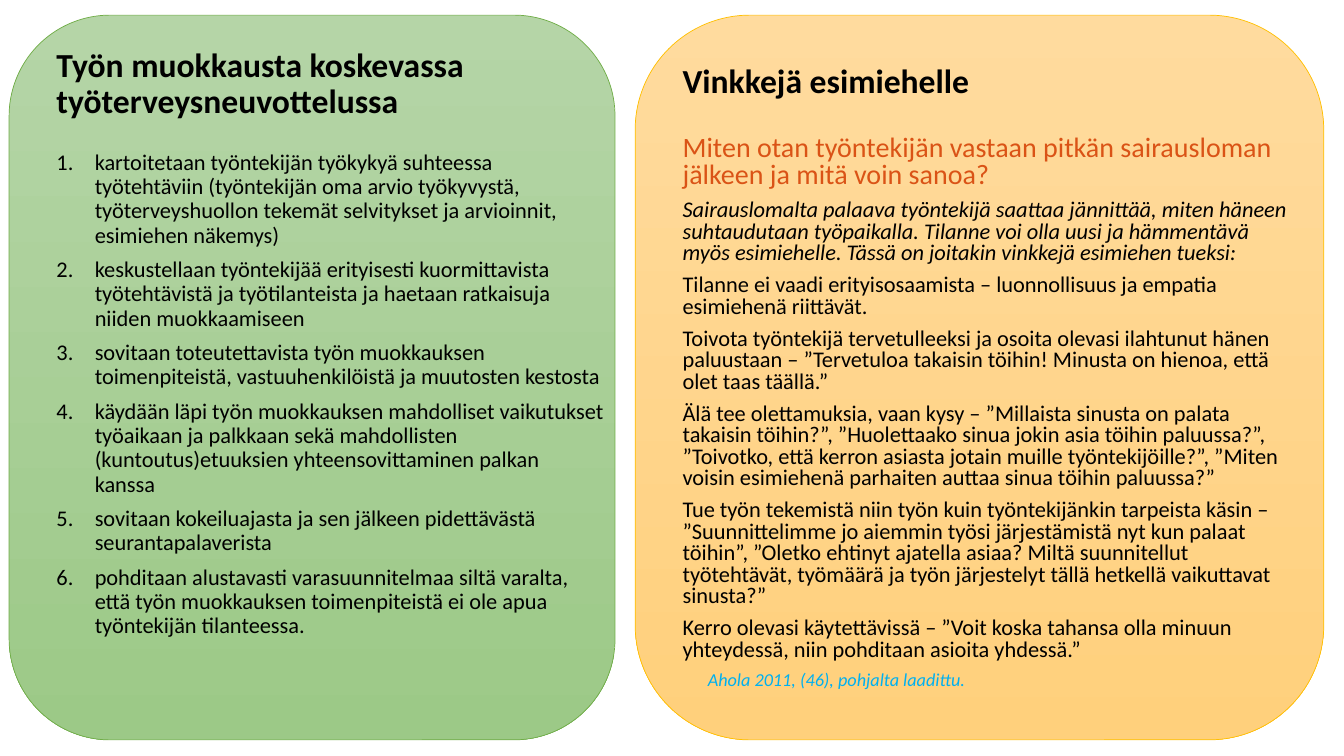
from lxml import etree
from pptx import Presentation
from pptx.dml.color import RGBColor
from pptx.enum.shapes import MSO_SHAPE
from pptx.enum.text import MSO_ANCHOR, MSO_AUTO_SIZE, PP_ALIGN
from pptx.oxml.ns import qn
from pptx.util import Inches, Pt

ROUNDED = MSO_SHAPE.ROUNDED_RECTANGLE
TOP, BOTTOM = MSO_ANCHOR.TOP, MSO_ANCHOR.BOTTOM
NO_AUTOFIT = MSO_AUTO_SIZE.NONE
LEFT = PP_ALIGN.LEFT
COMPARISON_LAYOUT = 4

WORK_STEPS = [
    "kartoitetaan työntekijän työkykyä suhteessa työtehtäviin (työntekijän oma arvio "
    "työkyvystä, työterveyshuollon tekemät selvitykset ja arvioinnit, esimiehen näkemys)",
    "keskustellaan työntekijää erityisesti kuormittavista työtehtävistä ja työtilanteista "
    "ja haetaan ratkaisuja niiden muokkaamiseen",
    "sovitaan toteutettavista työn muokkauksen toimenpiteistä, vastuuhenkilöistä ja "
    "muutosten kestosta",
    "käydään läpi työn muokkauksen mahdolliset vaikutukset työaikaan ja palkkaan sekä "
    "mahdollisten (kuntoutus)etuuksien yhteensovittaminen palkan kanssa",
    "sovitaan kokeiluajasta ja sen jälkeen pidettävästä seurantapalaverista",
    "pohditaan alustavasti varasuunnitelmaa siltä varalta, että työn muokkauksen "
    "toimenpiteistä ei ole apua työntekijän tilanteessa.",
]
QUESTION = "Miten otan työntekijän vastaan pitkän sairausloman jälkeen ja mitä voin sanoa?"
INTRODUCTION = (
    "Sairauslomalta palaava työntekijä saattaa jännittää, miten häneen suhtaudutaan "
    "työpaikalla. Tilanne voi olla uusi ja hämmentävä myös esimiehelle. Tässä on joitakin "
    "vinkkejä esimiehen tueksi:"
)
TIPS = [
    "Tilanne ei vaadi erityisosaamista – luonnollisuus ja empatia esimiehenä riittävät.",
    "Toivota työntekijä tervetulleeksi ja osoita olevasi ilahtunut hänen paluustaan – "
    "”Tervetuloa takaisin töihin! Minusta on hienoa, että olet taas täällä.”",
    "Älä tee olettamuksia, vaan kysy – ”Millaista sinusta on palata takaisin töihin?”, "
    "”Huolettaako sinua jokin asia töihin paluussa?”, ”Toivotko, että kerron asiasta jotain "
    "muille työntekijöille?”, ”Miten voisin esimiehenä parhaiten auttaa sinua töihin paluussa?”",
    "Tue työn tekemistä niin työn kuin työntekijänkin tarpeista käsin – ”Suunnittelimme jo "
    "aiemmin työsi järjestämistä nyt kun palaat töihin”, ”Oletko ehtinyt ajatella asiaa? "
    "Miltä suunnitellut työtehtävät, työmäärä ja työn järjestelyt tällä hetkellä vaikuttavat "
    "sinusta?”",
    "Kerro olevasi käytettävissä – ”Voit koska tahansa olla minuun yhteydessä, niin "
    "pohditaan asioita yhdessä.”",
]
SOURCE = "Ahola 2011, (46), pohjalta laadittu."


def color(value):
    return RGBColor.from_string(value)


class ComparisonSlide:
    font_name = "Calibri"
    text_color = "000000"
    body_size = 16
    paragraph_gap = Pt(7.5)

    def __init__(self, deck):
        self.page = deck.slides.add_slide(deck.slide_layouts[COMPARISON_LAYOUT])
        title = self.page.shapes.title.element
        title.getparent().remove(title)

    def panel(self, left, width, top_color, bottom_color, line_color):
        """Add a rounded gradient panel behind the text placeholders."""
        shape = self.page.shapes.add_shape(
            ROUNDED, Inches(left), Inches(0.15), Inches(width), Inches(7.19))
        shape.shadow.inherit = False
        shape.fill.gradient()
        shape.fill.gradient_angle = 270
        for stop, value in zip(shape.fill.gradient_stops, (top_color, bottom_color)):
            stop.color.rgb = color(value)
        shape.line.color.rgb = color(line_color)
        shape.line.width = Pt(0.5)
        first_placeholder = self.page.placeholders[1].element
        first_placeholder.addprevious(shape.element)

    def placeholder(self, index, left, top, width, height, anchor=TOP):
        """Place a layout placeholder and return its text frame."""
        box = self.page.placeholders[index]
        box.left, box.top = Inches(left), Inches(top)
        box.width, box.height = Inches(width), Inches(height)
        frame = box.text_frame
        frame.word_wrap = True
        frame.auto_size = NO_AUTOFIT
        frame.vertical_anchor = anchor
        return frame

    def paragraph(self, frame, text, size=body_size, text_color=text_color, bold=False,
                  italic=False, spacing=0.9, margin=0, numbered=False):
        first = not frame.text
        para = frame.paragraphs[0] if first else frame.add_paragraph()
        properties = para._p.get_or_add_pPr()
        properties.set("marL", str(Inches(margin)))
        properties.set("indent", str(-Inches(margin) if numbered else 0))
        if numbered:
            etree.SubElement(properties, qn("a:buFont"), typeface=self.font_name)
            etree.SubElement(properties, qn("a:buAutoNum"), type="arabicPeriod")
        else:
            etree.SubElement(properties, qn("a:buNone"))
        para.alignment = LEFT
        para.line_spacing = spacing
        para.space_before = Pt(0) if first else self.paragraph_gap
        span = para.add_run()
        span.text = text
        span.font.name = self.font_name
        span.font.size = Pt(size)
        span.font.bold = bold
        span.font.italic = italic
        span.font.color.rgb = color(text_color)

    def heading(self, index, left, top, width, text):
        frame = self.placeholder(index, left, top, width, 0.9, BOTTOM)
        self.paragraph(frame, text, size=24, bold=True)


def main():
    deck = Presentation()
    deck.slide_width, deck.slide_height = Inches(13.33), Inches(7.5)
    slide = ComparisonSlide(deck)

    slide.panel(6.3, 6.83, "FFDB9E", "FFD07C", "FFC000")
    slide.panel(0.09, 6.01, "B5D5A7", "9CC987", "70AD47")

    slide.heading(1, 0.46, 0.35, 5.64, "Työn muokkausta koskevassa työterveysneuvottelussa")
    steps = slide.placeholder(2, 0.46, 1.45, 5.64, 5.35)
    for step in WORK_STEPS:
        slide.paragraph(steps, step, margin=0.38, numbered=True)

    slide.heading(3, 6.67, 0.15, 5.67, "Vinkkejä esimiehelle")
    advice = slide.placeholder(4, 6.67, 1.3, 6.28, 6.05)
    slide.paragraph(advice, QUESTION, size=20, text_color="DA5316", spacing=0.8)
    slide.paragraph(advice, INTRODUCTION, italic=True, spacing=0.8)
    for tip in TIPS:
        slide.paragraph(advice, tip, spacing=0.8)
    slide.paragraph(advice, SOURCE, size=13, text_color="00B0F0", italic=True,
                    spacing=0.8, margin=0.25)

    deck.save("out.pptx")


if __name__ == "__main__":
    main()
